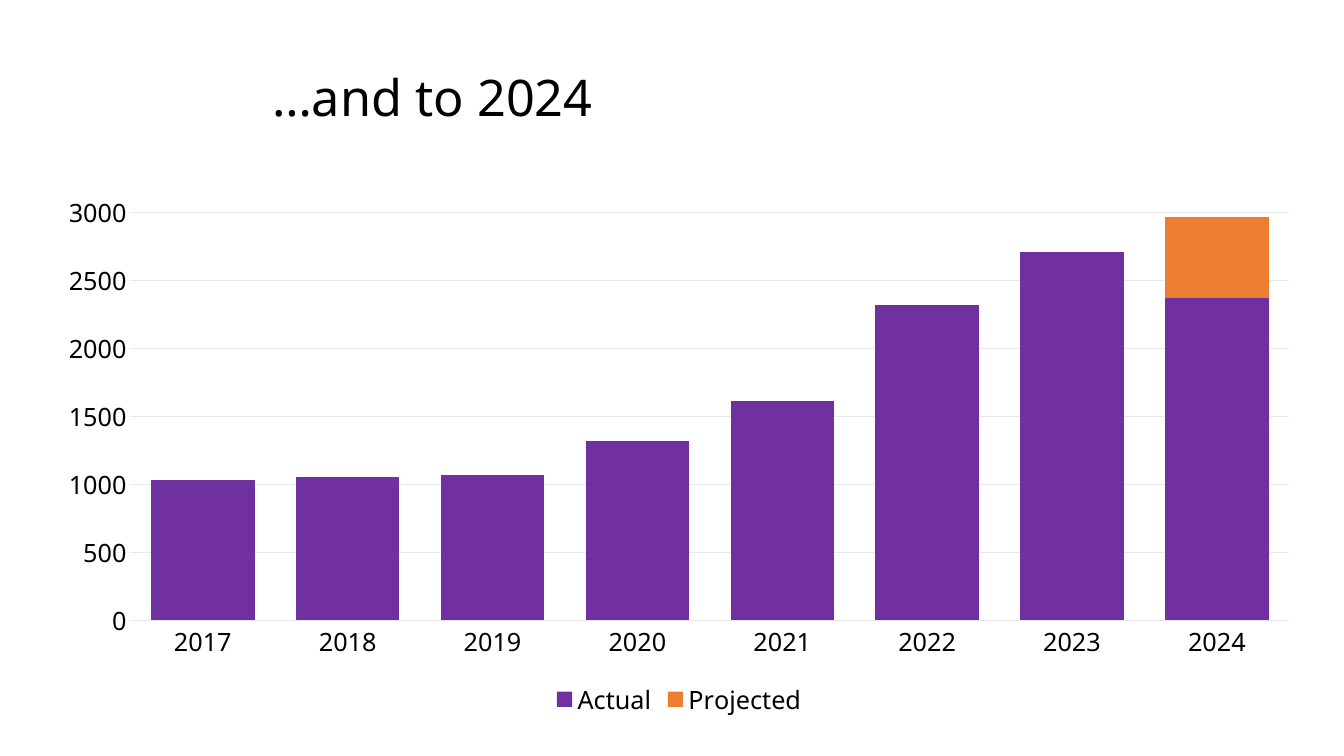
import pptx
import pptx.util
import pptx.chart.data
import pptx.dml.color
import pptx.enum.chart
import pptx.enum.text

FONT = "Noto Sans"
COLORS = {"text": "000000", "grid": "E7E8E9", "Actual": "7030A0", "Projected": "ED7D31"}
YEARS = [str(year) for year in range(2017, 2025)]
SERIES = {
    "Actual": [1030, 1050, 1070, 1320, 1610, 2320, 2710, 2370],
    "Projected": [None] * 7 + [600],
}


def rgb(name):
    return pptx.dml.color.RGBColor.from_string(COLORS[name])


def style_font(font, size):
    font.name = FONT
    font.size = pptx.util.Pt(size)
    font.color.rgb = rgb("text")


def style_line(line):
    line.color.rgb = rgb("grid")
    line.width = pptx.util.Pt(0.75)


def add_title(s, box, text):
    tf = s.shapes.add_textbox(*box).text_frame
    tf.word_wrap = True
    tf.vertical_anchor = pptx.enum.text.MSO_ANCHOR.MIDDLE
    tf.text = text
    p = tf.paragraphs[0]
    p.line_spacing = 0.9
    style_font(p.runs[0].font, 36)


def add_growth_chart(s, box):
    data = pptx.chart.data.CategoryChartData()
    data.categories = YEARS
    for name, values in SERIES.items():
        data.add_series(name, values)
    kind = pptx.enum.chart.XL_CHART_TYPE.COLUMN_STACKED
    chart = s.shapes.add_chart(kind, *box, data).chart
    chart.has_title = False
    style_font(chart.font, 18)

    plot = chart.plots[0]
    plot.gap_width = 40
    plot.overlap = 100
    plot.vary_by_categories = False
    for series in plot.series:
        series.format.fill.solid()
        series.format.fill.fore_color.rgb = rgb(series.name)

    for axis in (chart.category_axis, chart.value_axis):
        axis.major_tick_mark = pptx.enum.chart.XL_TICK_MARK.NONE
        axis.minor_tick_mark = pptx.enum.chart.XL_TICK_MARK.NONE
        style_font(axis.tick_labels.font, 18)
    style_line(chart.category_axis.format.line)
    values = chart.value_axis
    values.minimum_scale = 0
    values.maximum_scale = 3000
    values.major_unit = 500
    values.format.line.fill.background()
    values.has_major_gridlines = True
    style_line(values.major_gridlines.format.line)

    chart.has_legend = True
    chart.legend.position = pptx.enum.chart.XL_LEGEND_POSITION.BOTTOM
    chart.legend.include_in_layout = False
    style_font(chart.legend.font, 18)


def main():
    prs = pptx.Presentation()
    prs.slide_width = pptx.util.Inches(13.33)
    prs.slide_height = pptx.util.Inches(7.5)
    s = prs.slides.add_slide(prs.slide_layouts[6])
    inches = pptx.util.Inches
    add_title(s, [inches(n) for n in (2.6, 0.4, 9.81, 1.18)], "…and to 2024")
    add_growth_chart(s, [inches(n) for n in (0.43, 1.83, 12.61, 5.33)])
    prs.save("out.pptx")


if __name__ == "__main__":
    main()
